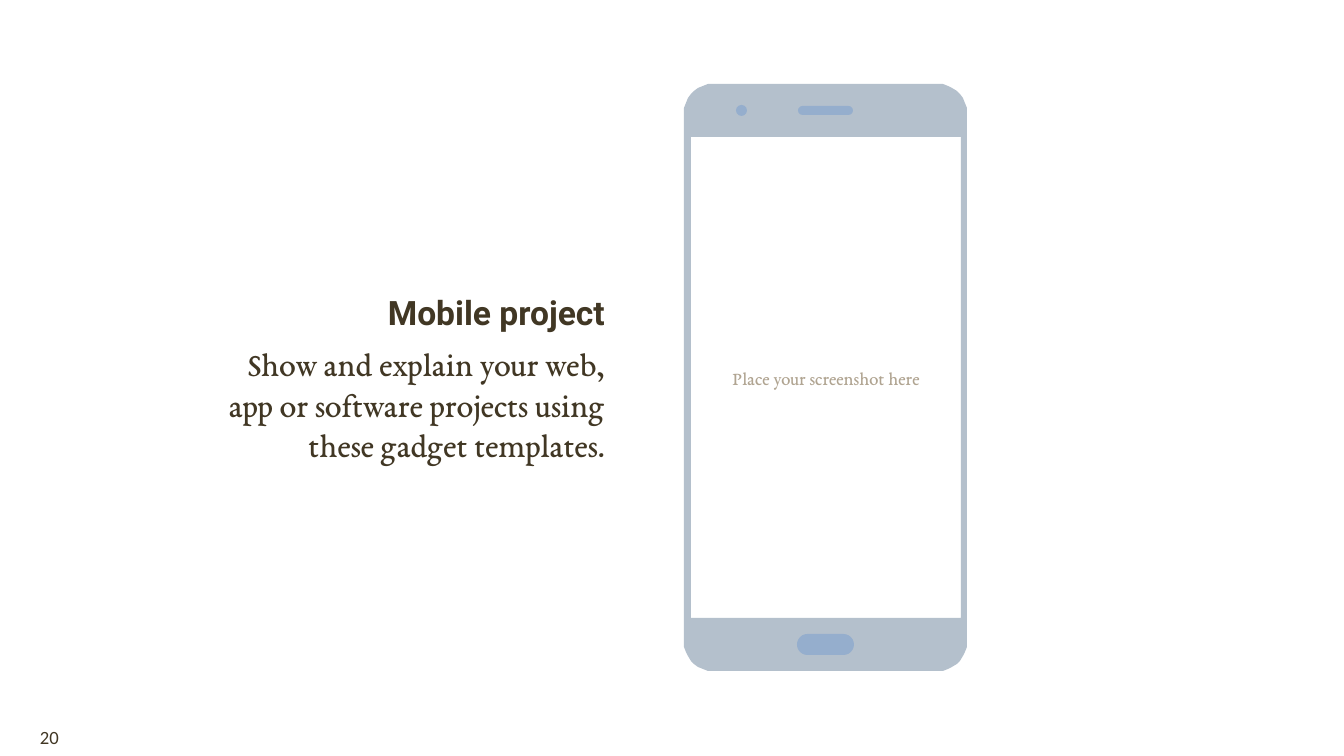
from math import cos, radians, sin
from pptx import Presentation
from pptx.dml.color import RGBColor
from pptx.enum.shapes import MSO_SHAPE as Shape
from pptx.enum.text import MSO_ANCHOR as Anchor, PP_ALIGN as Align
from pptx.util import Pt

PX = 914400 / 134.4
BROWN = RGBColor(0x41, 0x37, 0x24)
TAN = RGBColor(0xB0, 0xA4, 0x91)
GREY = RGBColor(0xB4, 0xC0, 0xCC)
BLUE = RGBColor(0x95, 0xAE, 0xCD)

TEXTS = [
    ((224, 38, 381, 680), 0, Align.RIGHT, [
        ("Mobile project", "Roboto", 18, True, BROWN),
        ("Show and explain your web, app or software projects using "
         "these gadget templates.", "EB Garamond", 18, False, BROWN),
    ]),
    ((692, 140, 268, 477), 13, Align.CENTER, [
        ("Place your screenshot here", "EB Garamond", 10, False, TAN),
    ]),
    ((40, 718, 1266, 38), 0, Align.LEFT, [
        ("20", "Calibri", 10, False, BROWN),
    ]),
]
BODY = (684, 84, 283, 587)
RADIUS = 29
SCREEN = (691, 137, 270, 481)
PARTS = [
    (Shape.ROUNDED_RECTANGLE, (797, 634, 57, 21)),
    (Shape.OVAL, (736, 105, 11, 11)),
    (Shape.ROUNDED_RECTANGLE, (798, 106, 55, 9)),
]


def emu(box):
    return [round(v * PX) for v in box]


def paint(shape, color):
    shape.shadow.inherit = False
    shape.fill.solid()
    shape.fill.fore_color.rgb = color
    shape.line.fill.background()


def outline(box, r):
    x, y, w, h = box
    hubs = [(x + w - r, y + h - r), (x + r, y + h - r),
            (x + r, y + r), (x + w - r, y + r)]
    return [(cx + r * cos(radians(a)), cy + r * sin(radians(a)))
            for i, (cx, cy) in enumerate(hubs)
            for a in range(90 * i, 90 * i + 91, 10)]


def add_body(slide):
    x, y, w, h = SCREEN
    rim = outline(BODY, RADIUS)
    pen = slide.shapes.build_freeform(*rim[0], scale=PX)
    pen.add_line_segments(rim[1:], close=True)
    pen.move_to(x, y)
    pen.add_line_segments([(x, y + h), (x + w, y + h), (x + w, y)], close=True)
    paint(pen.convert_to_shape(), GREY)


def add_text(slide, box, inset, align, lines):
    frame = slide.shapes.add_textbox(*emu(box)).text_frame
    frame.word_wrap = True
    frame.vertical_anchor = Anchor.MIDDLE
    pad = round(inset * PX)
    frame.margin_left = frame.margin_right = pad
    frame.margin_top = frame.margin_bottom = pad
    frame.text = "\n".join(line[0] for line in lines)
    for i, (para, line) in enumerate(zip(frame.paragraphs, lines)):
        para.alignment = align
        para.space_before = Pt(6 if i else 0)
        font = para.runs[0].font
        _, font.name, size, font.bold, font.color.rgb = line
        font.size = Pt(size)


def main():
    deck = Presentation()
    deck.slide_width, deck.slide_height = emu((1344, 756))
    slide = deck.slides.add_slide(deck.slide_layouts[6])
    for text in TEXTS:
        add_text(slide, *text)
    add_body(slide)
    for kind, box in PARTS:
        shape = slide.shapes.add_shape(kind, *emu(box))
        if kind == Shape.ROUNDED_RECTANGLE:
            shape.adjustments[0] = 0.5
        paint(shape, BLUE)
    deck.save("out.pptx")


if __name__ == "__main__":
    main()
